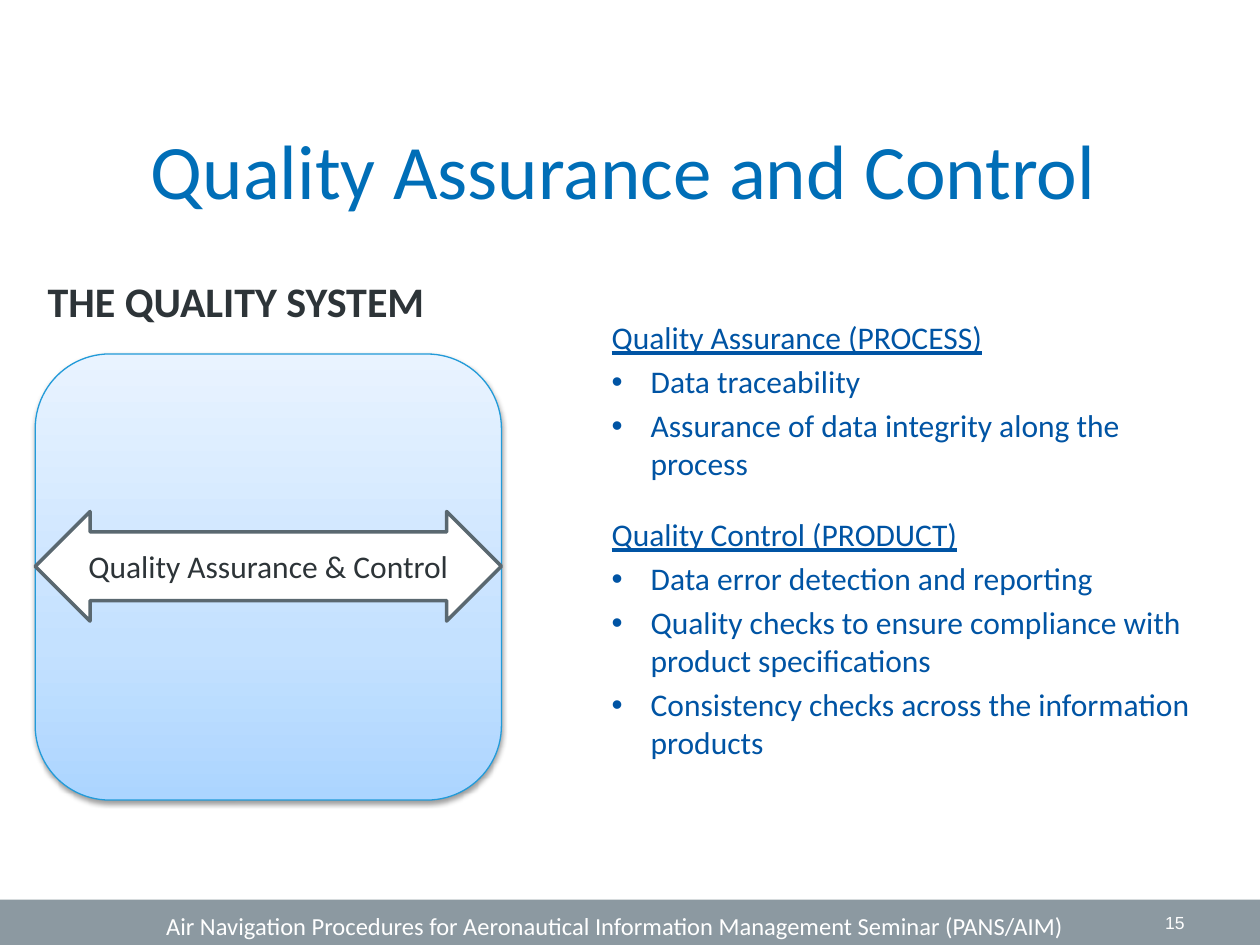
"""Build the Quality Assurance and Control slide."""
from copy import deepcopy

from lxml import etree
from pptx import Presentation
from pptx.dml.color import RGBColor
from pptx.enum import shapes, text
from pptx.oxml import parse_xml
from pptx.oxml.ns import nsdecls, qn
from pptx.util import Inches, Pt

COLORS = {
    "bar": "8C99A1", "white": "FFFFFF", "title": "006EB7", "body": "0054A4",
    "dark": "2D3438", "panel_line": "229BD9", "arrow_line": "5A6870",
}
PANEL_STOPS = [(0, "ACD5FF"), (0.35, "C4E1FF"), (1, "E9F3FF")]
TOPICS = [
    ("Quality Assurance (PROCESS)", [
        "Data traceability",
        "Assurance of data integrity along the process",
    ]),
    ("Quality Control (PRODUCT)", [
        "Data error detection and reporting",
        "Quality checks to ensure compliance with product specifications",
        "Consistency checks across the information products",
    ]),
]


def style(paragraph, size, color, font="Calibri", align=text.PP_ALIGN.LEFT):
    paragraph.alignment = align
    paragraph.font.size = Pt(size)
    paragraph.font.name = font
    paragraph.font.color.rgb = RGBColor.from_string(COLORS[color])


def add_shape(kind, left, top, width, height, fill=None, line=None, line_width=1):
    shape = slide.shapes.add_shape(
        kind, Inches(left), Inches(top), Inches(width), Inches(height))
    shape.shadow.inherit = False
    if fill:
        shape.fill.solid()
        shape.fill.fore_color.rgb = RGBColor.from_string(COLORS[fill])
    else:
        shape.fill.background()
    if line:
        shape.line.color.rgb = RGBColor.from_string(COLORS[line])
        shape.line.width = Pt(line_width)
    else:
        shape.line.fill.background()
    return shape


prs = Presentation()
prs.slide_width, prs.slide_height = Inches(10), Inches(7.5)
slide = prs.slides.add_slide(prs.slide_layouts[6])
kinds = shapes.MSO_SHAPE
align = text.PP_ALIGN
anchor = text.MSO_ANCHOR

add_shape(kinds.RECTANGLE, 0, 7.14, 10, 0.36, "bar")

panel = add_shape(kinds.ROUNDED_RECTANGLE, 0.28, 2.81, 3.7, 3.54,
                  line="panel_line", line_width=0.75)
panel.fill.gradient()
panel.fill.gradient_angle = 90
first_stop = panel.element.spPr.find(".//" + qn("a:gs"))
first_stop.addnext(deepcopy(first_stop))
for stop, (position, color) in zip(panel.fill.gradient_stops, PANEL_STOPS):
    stop.position = position
    stop.color.rgb = RGBColor.from_string(color)
panel.element.spPr.find(qn("a:effectLst")).append(parse_xml(
    f'<a:outerShdw {nsdecls("a")} blurRad="{Pt(3.1)}" dist="{Pt(1.6)}" '
    'dir="5400000" rotWithShape="0"><a:srgbClr val="000000">'
    '<a:alpha val="38000"/></a:srgbClr></a:outerShdw>'))

topics = add_shape(kinds.ROUNDED_RECTANGLE, 4.53, 2.25, 5.35, 4.63).text_frame
topics.word_wrap = True
topics.vertical_anchor = anchor.TOP
lines = [(line, line == heading) for heading, points in TOPICS
         for line in [heading, *points]]
for index, (line, is_heading) in enumerate(lines):
    paragraph = topics.add_paragraph() if index else topics.paragraphs[0]
    paragraph.text = line
    if index:
        paragraph.space_before = Pt(19 if is_heading else 3.6)
    if not is_heading:
        properties = paragraph._p.get_or_add_pPr()
        properties.set("marL", str(Inches(0.31)))
        properties.set("indent", str(-Inches(0.31)))
        etree.SubElement(properties, qn("a:buFont"), typeface="Arial")
        etree.SubElement(properties, qn("a:buChar"), char="•")
    style(paragraph, 18, "body")
    paragraph.font.underline = is_heading

arrow = add_shape(kinds.LEFT_RIGHT_ARROW, 0.28, 4.06, 3.7, 0.87,
                  "white", "arrow_line", 2)
arrow.adjustments[0] = 0.626
arrow.adjustments[1] = 0.5
arrow.text_frame.text = "Quality Assurance & Control"
arrow.text_frame.vertical_anchor = anchor.MIDDLE
style(arrow.text_frame.paragraphs[0], 18, "dark", align=align.CENTER)

labels = [
    ("Quality Assurance and Control ", (0.52, 0.92, 9, 1.25),
     44, "title", "Calibri", align.CENTER, anchor.TOP, False),
    ("THE QUALITY SYSTEM", (0.28, 2.14, 4.92, 0.5),
     24, "dark", "Calibri", align.LEFT, anchor.TOP, True),
    ("Air Navigation Procedures for Aeronautical Information Management "
     "Seminar (PANS/AIM)", (1.22, 7.18, 7.72, 0.57),
     14, "white", "Calibri", align.LEFT, anchor.TOP, False),
    ("15", (7.17, 7.14, 2.33, 0.36),
     10, "white", "Arial", align.RIGHT, anchor.MIDDLE, False),
]
for wording, place, size, color, font, side, vertical, bold in labels:
    label = slide.shapes.add_textbox(*map(Inches, place)).text_frame
    label.word_wrap = True
    label.vertical_anchor = vertical
    label.text = wording
    style(label.paragraphs[0], size, color, font, side)
    label.paragraphs[0].font.bold = bold

prs.save("out.pptx")
